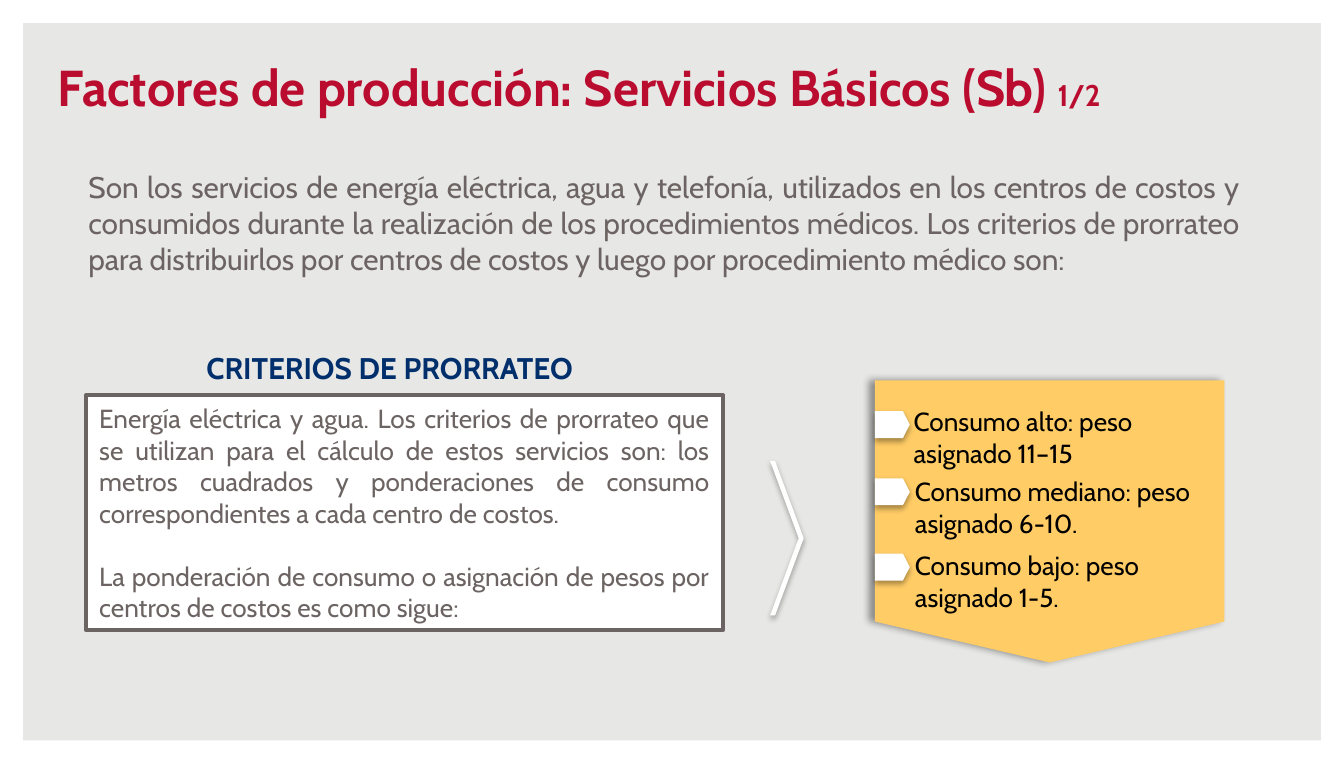
import pptx
import pptx.util
import pptx.dml.color
import pptx.enum.shapes
import pptx.enum.text
import pptx.oxml
import pptx.oxml.ns

Inches = pptx.util.Inches
Pt = pptx.util.Pt
SHAPE = pptx.enum.shapes.MSO_SHAPE
ALIGN = pptx.enum.text.PP_ALIGN
ANCHOR = pptx.enum.text.MSO_ANCHOR
COLORS = {
    "background": "E7E7E5", "white": "FFFFFF", "red": "BA0C2F", "gray": "6C6463",
    "blue": "002F6C", "yellow": "FFCC66", "black": "000000",
}


def color(name):
    return pptx.dml.color.RGBColor.from_string(COLORS[name])


def write(shape, paragraphs, size=14, fill="black", bold=False, align=ALIGN.LEFT,
          anchor=ANCHOR.TOP, before=0, after=0, gap=0):
    """Fill a shape with paragraphs, each a list of (text, size or None) runs."""
    frame = shape.text_frame
    frame.word_wrap = True
    frame.auto_size = pptx.enum.text.MSO_AUTO_SIZE.NONE
    frame.vertical_anchor = anchor
    for index, runs in enumerate(paragraphs):
        paragraph = frame.add_paragraph() if index else frame.paragraphs[0]
        paragraph.alignment = align
        paragraph.space_before = Pt(gap if index else before)
        paragraph.space_after = Pt(after)
        for text, run_size in runs:
            run = paragraph.add_run()
            run.text = text
            run.font.name = "Cabin"
            run.font.size = Pt(run_size or size)
            run.font.bold = bold
            run.font.color.rgb = color(fill)


def add_block(kind, left, top, width, height, fill, adjustment=None, shadow=None):
    """Add a borderless shape; shadow is (opacity %, blur, distance, direction)."""
    shape = slide.shapes.add_shape(kind, Inches(left), Inches(top), Inches(width), Inches(height))
    shape.fill.solid()
    shape.fill.fore_color.rgb = color(fill)
    shape.line.fill.background()
    shape.shadow.inherit = False
    if adjustment is not None:
        shape.adjustments[0] = adjustment
    if shadow:
        opacity, blur, distance, direction = shadow
        effects = shape._element.spPr.find(pptx.oxml.ns.qn("a:effectLst"))
        effects.append(pptx.oxml.parse_xml(
            f'<a:outerShdw {pptx.oxml.ns.nsdecls("a")} blurRad="{Pt(blur)}" '
            f'dist="{Pt(distance)}" dir="{direction * 60000}" rotWithShape="0">'
            f'<a:srgbClr val="{COLORS["black"]}"><a:alpha val="{opacity * 1000}"/>'
            '</a:srgbClr></a:outerShdw>'))
    return shape


presentation = pptx.Presentation()
presentation.slide_width = Inches(10)
presentation.slide_height = Inches(5.67)
slide = presentation.slides.add_slide(presentation.slide_layouts[5])
slide.background.fill.solid()
slide.background.fill.fore_color.rgb = color("background")

# White frame around the slide
add_block(SHAPE.FRAME, 0, 0, 10, 5.68, "white", 0.03)

# Title
title = slide.shapes.title
title.left, title.top, title.width, title.height = map(Inches, (0.33, 0.17, 9.55, 0.75))
write(title, [[("Factores de producción: Servicios Básicos (Sb) ", None), ("1/2", 16)]],
      size=27, fill="red", bold=True, anchor=ANCHOR.BOTTOM)

# Introduction
introduction = slide.shapes.add_textbox(Inches(0.56), Inches(1.21), Inches(8.77), Inches(1.26))
write(introduction, [[(
    "Son los servicios de energía eléctrica, agua y telefonía, utilizados en los centros de "
    "costos y consumidos durante la realización de los procedimientos médicos. Los criterios "
    "de prorrateo para distribuirlos por centros de costos y luego por procedimiento médico "
    "son:", None)]], size=16, fill="gray", align=ALIGN.JUSTIFY, before=18, after=8)

# Criteria box with its heading
criteria = add_block(SHAPE.RECTANGLE, 0.64, 2.94, 4.74, 1.75, "white")
criteria.line.color.rgb = color("gray")
criteria.line.width = Pt(2)
write(criteria, [
    [("Energía eléctrica y agua. Los criterios de prorrateo que se utilizan para el cálculo de "
      "estos servicios son: los metros cuadrados y ponderaciones de consumo correspondientes a "
      "cada centro de costos.", None)],
    [("La ponderación de consumo o asignación de pesos por centros de costos es como sigue:",
      None)],
], fill="gray", align=ALIGN.JUSTIFY, anchor=ANCHOR.MIDDLE, gap=17)
heading = slide.shapes.add_textbox(Inches(1.15), Inches(2.55), Inches(3.5), Inches(0.37))
write(heading, [[("CRITERIOS DE PRORRATEO", None)]],
      size=16, fill="blue", bold=True, align=ALIGN.CENTER)

# Chevron from the criteria to the weights
soft_shadow = (35, 3.1, 1.8, 90)
add_block(SHAPE.CHEVRON, 5.73, 3.43, 0.25, 1.15, "white", 0.853, soft_shadow)

# Weights panel, pointing down
panel = add_block(SHAPE.PENTAGON, 6.76, 2.58, 2.1, 2.6, "yellow", 0.145, (40, 4, 3, 180))
panel.rotation = 90

# Consumption levels, each with a white tag
levels = [
    ("Consumo alto: peso asignado 11–15", 6.7, 2.97, 3.06),
    ("Consumo mediano: peso asignado 6-10.", 6.71, 3.49, 3.56),
    ("Consumo bajo: peso asignado 1-5.", 6.71, 4.04, 4.12),
]
for text, left, top, tag_top in levels:
    level = slide.shapes.add_textbox(Inches(left), Inches(top), Inches(2.4), Inches(0.57))
    write(level, [[(text, None)]])
    add_block(SHAPE.PENTAGON, 6.51, tag_top, 0.26, 0.2, "white", 0.256, soft_shadow)

presentation.save("out.pptx")
